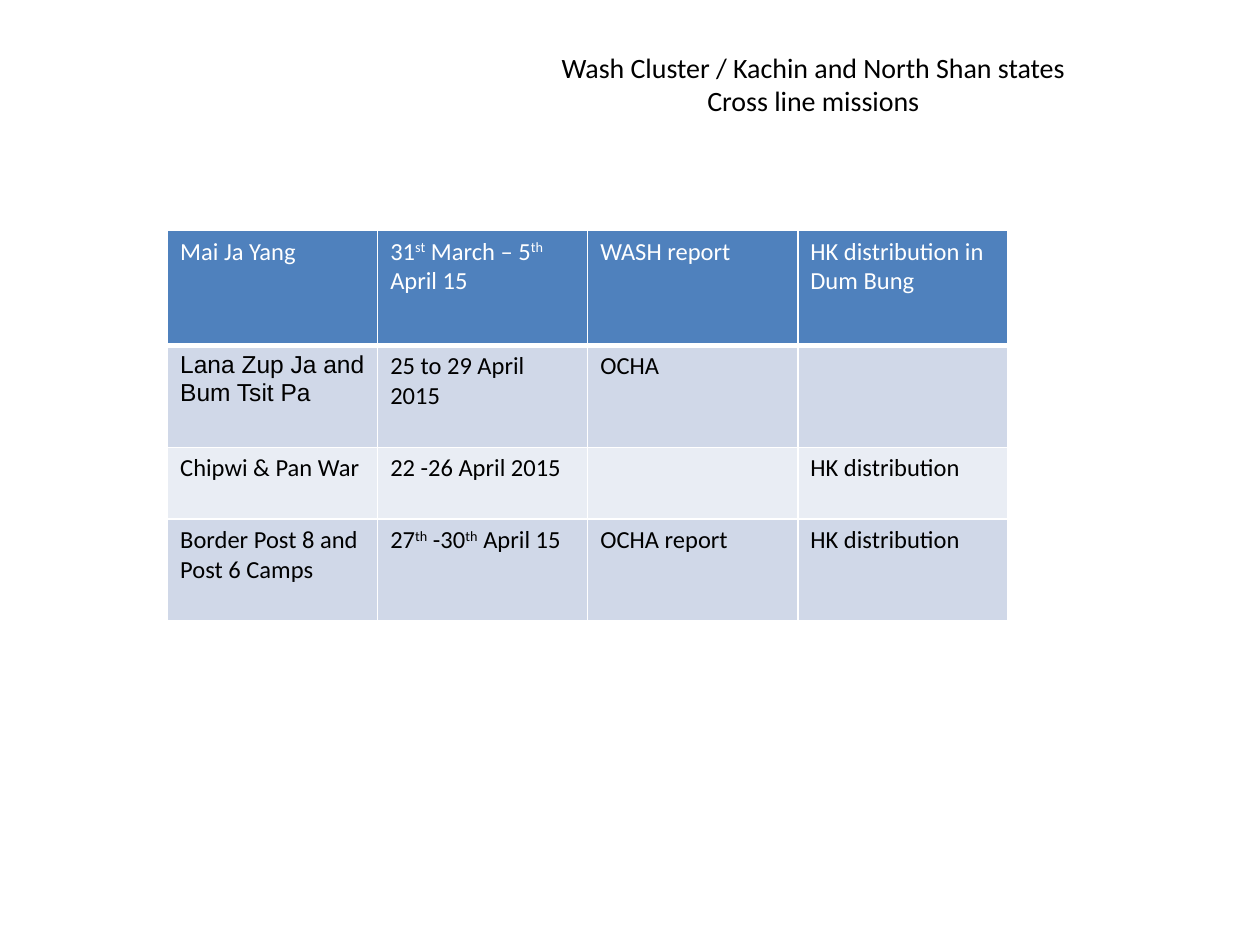
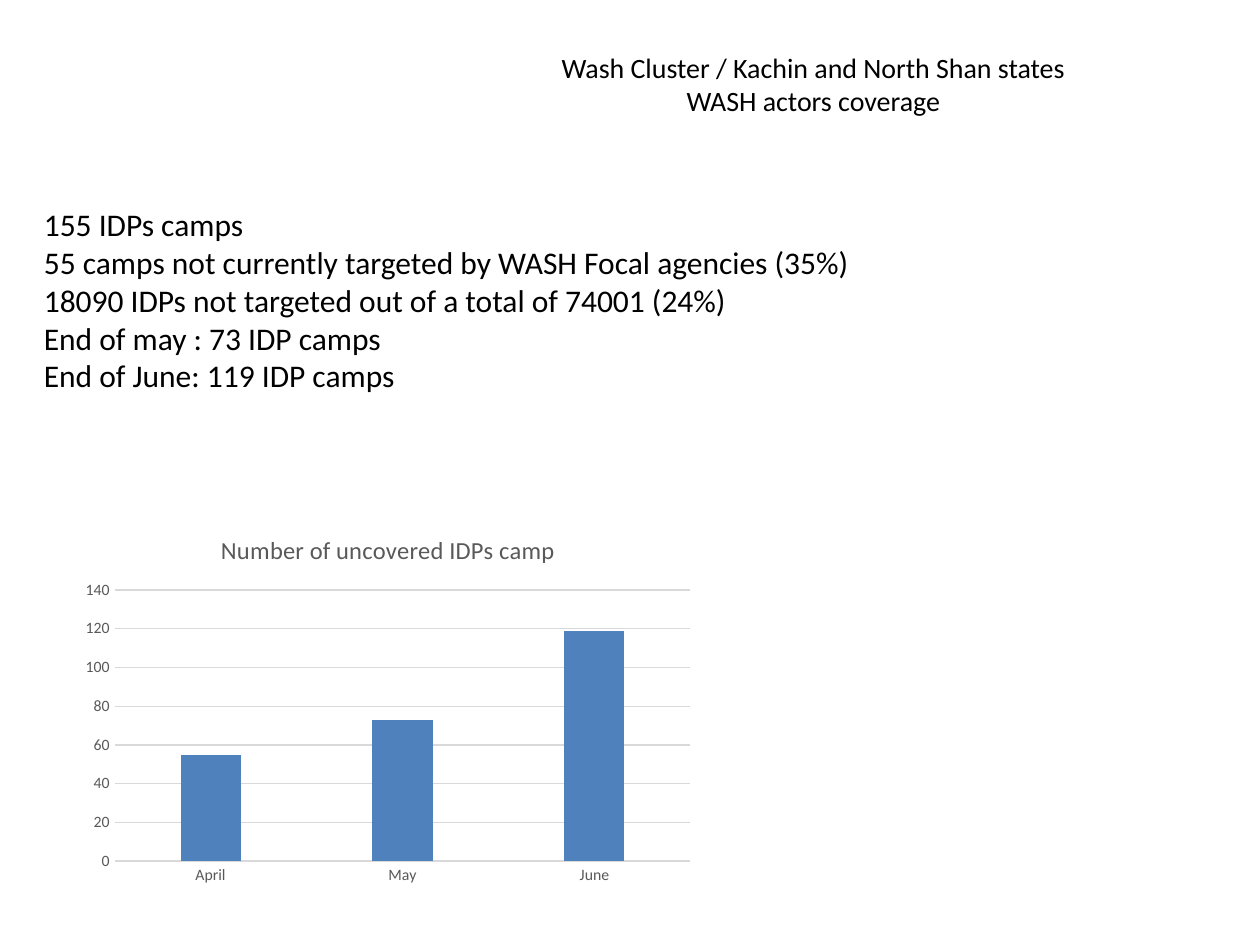
import lxml.etree
import pptx
import pptx.chart.data
import pptx.dml.color
import pptx.enum.chart
import pptx.enum.text
import pptx.oxml.ns
import pptx.util
from dataclasses import dataclass

Inches = pptx.util.Inches
Pt = pptx.util.Pt
qn = pptx.oxml.ns.qn


@dataclass(frozen=True)
class Theme:
    font: str = "Calibri"
    alt: str = "Arial"
    black: str = "000000"
    white: str = "FFFFFF"
    blue: str = "4F81BD"
    bands: tuple = ("D0D8E8", "E9EDF4")
    gray: str = "595959"
    rule: str = "D9D9D9"
    head: int = 16
    body: int = 18
    cell: int = 14
    tick: int = 9


THEME = Theme()
HEAD = (3.33, 0.25, 6.25, 0.83)
TOPIC = "Wash Cluster / Kachin and North Shan states"

ROWS = [
    ("Mai Ja Yang", "31^st^ March – 5^th^ April 15", "WASH report",
     "HK distribution in Dum Bung"),
    ("Lana Zup Ja and Bum Tsit Pa", "25 to 29 April 2015", "OCHA", ""),
    ("Chipwi & Pan War", "22 -26 April 2015", "", "HK distribution"),
    ("Border Post 8 and Post 6 Camps", "27^th^ -30^th^ April 15",
     "OCHA report", "HK distribution"),
]
TALL = (0.91, 0.81, 0.57, 0.81)

FACTS = [
    "155 IDPs camps",
    "55 camps not currently targeted by WASH Focal agencies (35%)",
    "18090 IDPs not targeted out of a total of 74001 (24%)",
    "End of may : 73 IDP camps",
    "End of June: 119 IDP camps",
]
CAMPS = {"April": 55, "May": 73, "June": 119}


def paint(code):
    return pptx.dml.color.RGBColor.from_string(code)


def style(font, size, color=THEME.black, name=THEME.font):
    font.name, font.size, font.bold = name, Pt(size), False
    font.color.rgb = paint(color)


def place(box):
    return [Inches(n) for n in box]


def add_text(slide, box, lines, size):
    """Write one paragraph per line in a wrapping text box."""
    frame = slide.shapes.add_textbox(*place(box)).text_frame
    frame.word_wrap = True
    for i, line in enumerate(lines):
        para = frame.add_paragraph() if i else frame.paragraphs[0]
        para.text = line
        style(para.font, size)
    return frame


def add_head(slide, topic):
    """Shared two-line title."""
    frame = add_text(slide, HEAD, [f"{TOPIC}\v{topic}"], THEME.head)
    frame.vertical_anchor = pptx.enum.text.MSO_ANCHOR.MIDDLE
    frame.paragraphs[0].alignment = pptx.enum.text.PP_ALIGN.CENTER


def add_edge(cell, side, width):
    """White cell border on one side: L, R, T or B."""
    props = cell._tc.get_or_add_tcPr()
    line = lxml.etree.SubElement(props, qn(f"a:ln{side}"), w=str(Pt(width)))
    fill = lxml.etree.SubElement(line, qn("a:solidFill"))
    lxml.etree.SubElement(fill, qn("a:srgbClr"), val=THEME.white)


def fill_cell(cell, text, row, col):
    """Text between carets is raised."""
    para = cell.text_frame.paragraphs[0]
    name = THEME.alt if (row, col) == (1, 0) else THEME.font
    style(para.font, THEME.cell, THEME.black if row else THEME.white, name)
    for i, part in enumerate(text.split("^")):
        if part:
            run = para.add_run()
            run.text = part
            if i % 2:
                run._r.get_or_add_rPr().set("baseline", "30000")

    thick = {"T": 3 if row == 1 else 1, "B": 1 if row else 3}
    for side in "LRTB":
        add_edge(cell, side, thick.get(side, 1))
    cell.fill.solid()
    cell.fill.fore_color.rgb = paint(
        THEME.bands[(row - 1) % 2] if row else THEME.blue)


def add_grid(slide, box):
    """Table of missions."""
    table = slide.shapes.add_table(len(ROWS), len(ROWS[0]), *place(box)).table
    for col in table.columns:
        col.width = Inches(box[2] / len(ROWS[0]))
    for r, texts in enumerate(ROWS):
        table.rows[r].height = Inches(TALL[r])
        for c, text in enumerate(texts):
            fill_cell(table.cell(r, c), text, r, c)


def add_bars(slide, box):
    """Column chart of uncovered camps."""
    data = pptx.chart.data.CategoryChartData()
    data.categories = list(CAMPS)
    data.add_series("Series 1", list(CAMPS.values()))
    kind = pptx.enum.chart.XL_CHART_TYPE.COLUMN_CLUSTERED
    chart = slide.shapes.add_chart(kind, *place(box), data).chart
    style(chart.font, 10)
    chart.has_legend = False
    chart.has_title = True
    title = chart.chart_title.text_frame.paragraphs[0]
    title.text = "Number of uncovered IDPs camp"
    style(title.font, THEME.cell, THEME.gray)

    # Bars
    plot = chart.plots[0]
    plot.gap_width, plot.overlap = 219, -27
    plot.vary_by_categories = False
    fill = plot.series[0].format.fill
    fill.solid()
    fill.fore_color.rgb = paint(THEME.blue)

    # Axes
    cats, vals = chart.category_axis, chart.value_axis
    for axis in (cats, vals):
        style(axis.tick_labels.font, THEME.tick, THEME.gray)
        axis.major_tick_mark = pptx.enum.chart.XL_TICK_MARK.NONE
    vals.minimum_scale, vals.maximum_scale, vals.major_unit = 0, 140, 20
    vals.format.line.fill.background()
    for line in (cats.format.line, vals.major_gridlines.format.line):
        line.width = Pt(0.75)
        line.color.rgb = paint(THEME.rule)


def show_trips(slide):
    add_head(slide, "Cross line missions")
    add_grid(slide, (1.33, 1.83, 6.67, sum(TALL)))


def show_reach(slide):
    add_head(slide, "WASH actors coverage")
    add_text(slide, (0.25, 1.58, 9, 2.22), FACTS, THEME.body)
    add_bars(slide, (0.58, 4.08, 5, 3))


def main():
    deck = pptx.Presentation()
    deck.slide_width, deck.slide_height = Inches(10), Inches(7.5)
    for show in (show_trips, show_reach):
        show(deck.slides.add_slide(deck.slide_layouts[6]))
    deck.save("out.pptx")


if __name__ == "__main__":
    main()
